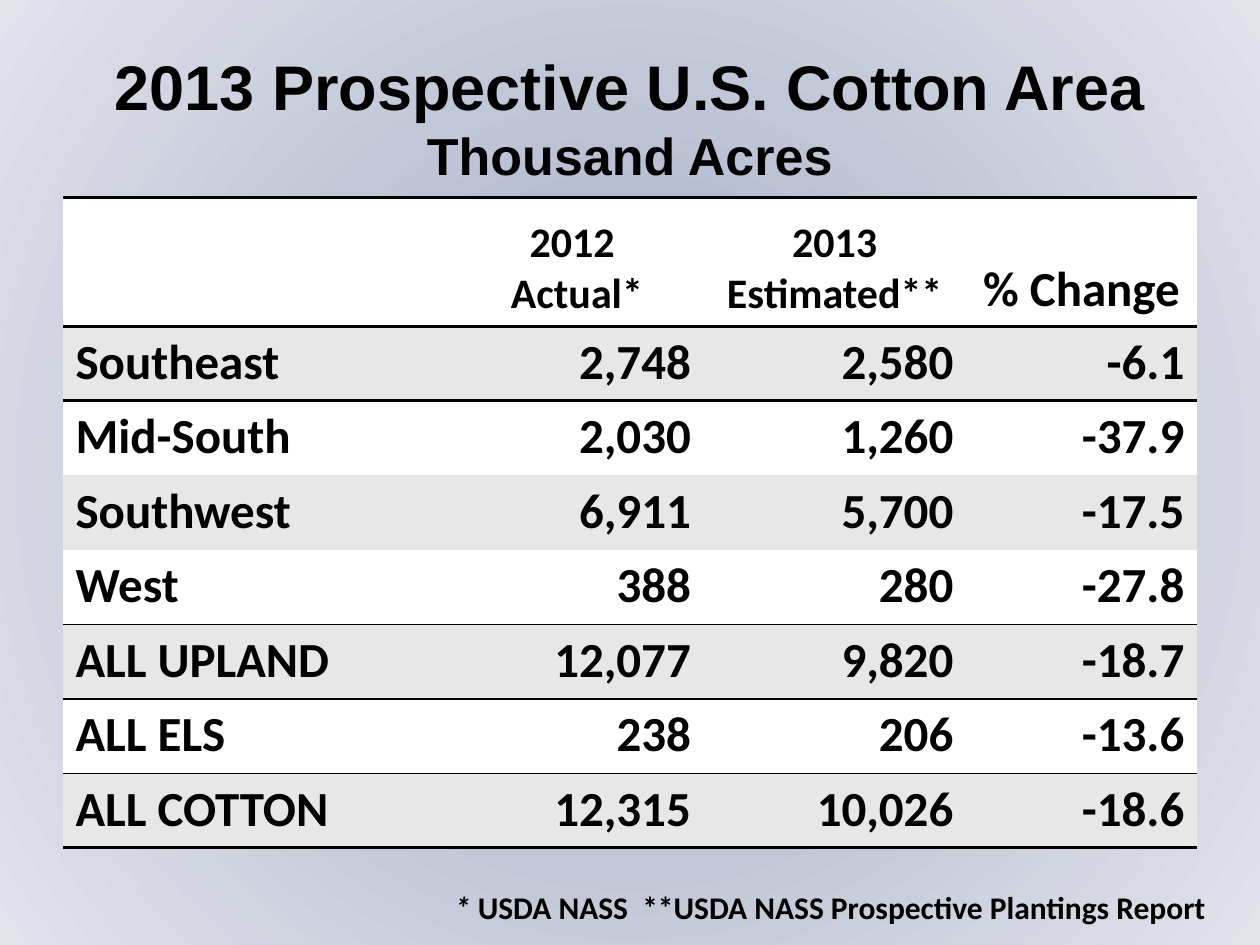
"""Build a slide with a table of prospective cotton area by region."""
from dataclasses import dataclass

from lxml import etree
from pptx import Presentation
from pptx.dml.color import RGBColor
from pptx.enum.text import MSO_ANCHOR, MSO_AUTO_SIZE, PP_ALIGN
from pptx.oxml import parse_xml
from pptx.oxml.ns import qn
from pptx.util import Pt

LEFT, MID, RIGHT = PP_ALIGN.LEFT, PP_ALIGN.CENTER, PP_ALIGN.RIGHT
TOP, CENTRE, BASE = MSO_ANCHOR.TOP, MSO_ANCHOR.MIDDLE, MSO_ANCHOR.BOTTOM
GROW = MSO_AUTO_SIZE.SHAPE_TO_FIT_TEXT
NS = "http://schemas.openxmlformats.org/drawingml/2006/main"
PLAIN = "{2D5ABB26-0587-4C30-8999-92F81FD0307C}"


@dataclass(frozen=True)
class Theme:
    ink: str = "000000"
    paper: str = "FFFFFF"
    band: str = "E7E7E7"
    glow: tuple = ((0, "98A3C1"), (50, "C2C7D7"), (100, "E1E4EB"))
    head: str = "Arial"
    body: str = "Calibri"
    title: float = 36
    sub: float = 29.7
    cell: float = 28
    label: float = 24
    note: float = 18


class Deck:
    def __init__(self, theme):
        self.theme = theme
        self.file = Presentation()
        self.file.slide_width, self.file.slide_height = Pt(720), Pt(540)
        self.slide = self.file.slides.add_slide(self.file.slide_layouts[6])

    def backdrop(self):
        fill = self.slide.background.fill
        fill.solid()
        stops = "".join(
            f'<a:gs pos="{pos * 1000}"><a:srgbClr val="{tint}"/></a:gs>'
            for pos, tint in self.theme.glow)
        grad = parse_xml(
            f'<a:gradFill xmlns:a="{NS}" rotWithShape="1"><a:gsLst>{stops}</a:gsLst>'
            '<a:path path="circle"><a:fillToRect l="50000" t="50000" r="50000" b="50000"/>'
            '</a:path></a:gradFill>')
        solid = next(self.slide.element.iter(qn("a:solidFill")))
        solid.getparent().replace(solid, grad)

    def style(self, para, size, face, align):
        para.alignment = align
        for run in para.runs:
            font = run.font
            font.name, font.size, font.bold = face, Pt(size), True
            font.color.rgb = RGBColor.from_string(self.theme.ink)

    def box(self, place, anchor):
        frame = self.slide.shapes.add_textbox(*map(Pt, place)).text_frame
        frame.word_wrap = True
        frame.vertical_anchor = anchor
        return frame

    def title(self, place, text):
        frame = self.box(place, CENTRE)
        frame.text = text
        for para, size in zip(frame.paragraphs, (self.theme.title, self.theme.sub)):
            self.style(para, size, self.theme.head, MID)

    def note(self, place, mark, text, inset):
        frame = self.box(place, TOP)
        frame.auto_size = GROW
        frame.margin_left = Pt(inset)
        para = frame.paragraphs[0]
        para.text = mark
        para.add_run().text = text
        self.style(para, self.theme.note, self.theme.body, LEFT)
        para.runs[0].font.italic = True

    def edge(self, cell, tag, width):
        props = cell._tc.get_or_add_tcPr()
        line = etree.Element(qn(f"a:{tag}"), w=str(Pt(width)))
        fill = etree.SubElement(line, qn("a:solidFill"))
        etree.SubElement(fill, qn("a:srgbClr"), val=self.theme.ink)
        props.insert(0, line)

    def table(self, place, rows, widths, heights, rules):
        grid = self.slide.shapes.add_table(
            len(rows), len(widths), *map(Pt, place)).table
        next(grid._tbl.iter(qn("a:tableStyleId"))).text = PLAIN
        grid.first_row = grid.horz_banding = False
        for col, width in zip(grid.columns, widths):
            col.width = Pt(width)
        for r, (row, height) in enumerate(zip(rows, heights)):
            grid.rows[r].height = Pt(height)
            for c, text in enumerate(row):
                self.cell(grid.cell(r, c), text, r, c, rules)

    def cell(self, cell, text, r, c, rules):
        theme = self.theme
        cell.fill.solid()
        cell.fill.fore_color.rgb = RGBColor.from_string(theme.band if r % 2 else theme.paper)
        cell.vertical_anchor = TOP if r else BASE
        cell.text_frame.text = text
        size = theme.label if r == 0 and c < 3 else theme.cell
        align = MID if r == 0 else RIGHT if c else LEFT
        for para in cell.text_frame.paragraphs:
            self.style(para, size, theme.body, align)
        for tag, line in (("lnB", r + 1), ("lnT", r)):
            if line in rules:
                self.edge(cell, tag, rules[line])


ROWS = (
    ("", "2012\n Actual*", "2013 Estimated**", "% Change"),
    ("Southeast", "2,748", "2,580", "-6.1"),
    ("Mid-South", "2,030", "1,260", "-37.9"),
    ("Southwest", "6,911", "5,700", "-17.5"),
    ("West", "388", "280", "-27.8"),
    ("ALL UPLAND", "12,077", "9,820", "-18.7"),
    ("ALL ELS", "238", "206", "-13.6"),
    ("ALL COTTON", "12,315", "10,026", "-18.6"),
)
RULES = {0: 2, 1: 2, 5: 1, 7: 1, 8: 2}


def main():
    deck = Deck(Theme())
    deck.backdrop()
    deck.title((36, 21.6, 648, 90), "2013 Prospective U.S. Cotton Area\nThousand Acres")
    deck.table((36, 113, 648, 372), ROWS, (216, 150, 150, 132),
               (73.5, *[42.6] * 7), RULES)
    deck.note((222, 504, 498, 29), "* ",
              "USDA NASS  **USDA NASS Prospective Plantings Report", 38)
    deck.file.save("out.pptx")


if __name__ == "__main__":
    main()
